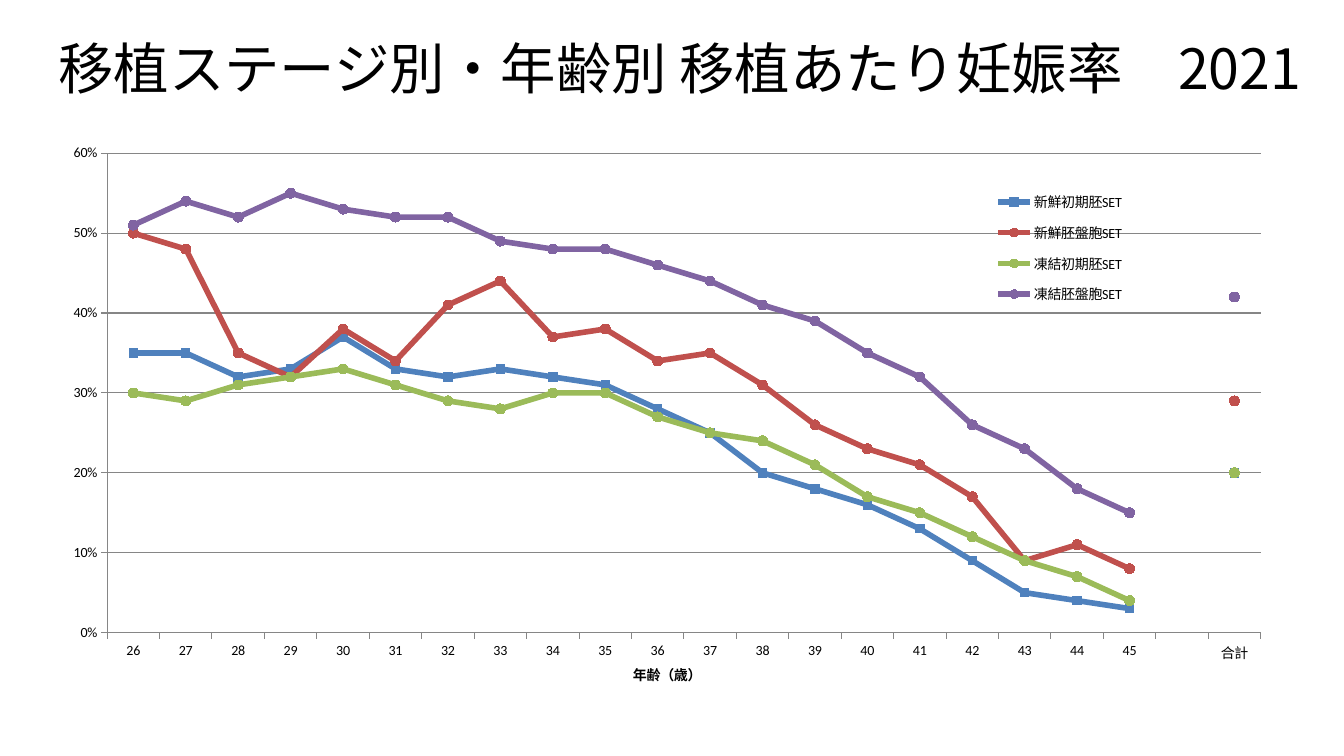
import pptx
import pptx.chart.data
import pptx.dml.color
import pptx.enum.chart
import pptx.enum.text
import pptx.oxml
import pptx.oxml.ns
import pptx.util
from pptx.util import Cm

AGES = [str(age) for age in range(26, 46)] + ["", "合計"]
RATES = [
    ("新鮮初期胚SET", "4F81BD", "SQUARE",
     [0.35, 0.35, 0.32, 0.33, 0.37, 0.33, 0.32, 0.33, 0.32, 0.31, 0.28,
      0.25, 0.2, 0.18, 0.16, 0.13, 0.09, 0.05, 0.04, 0.03, None, 0.2]),
    ("新鮮胚盤胞SET", "C0504D", "CIRCLE",
     [0.5, 0.48, 0.35, 0.32, 0.38, 0.34, 0.41, 0.44, 0.37, 0.38, 0.34,
      0.35, 0.31, 0.26, 0.23, 0.21, 0.17, 0.09, 0.11, 0.08, None, 0.29]),
    ("凍結初期胚SET", "9BBB59", "CIRCLE",
     [0.3, 0.29, 0.31, 0.32, 0.33, 0.31, 0.29, 0.28, 0.3, 0.3, 0.27,
      0.25, 0.24, 0.21, 0.17, 0.15, 0.12, 0.09, 0.07, 0.04, None, 0.2]),
    ("凍結胚盤胞SET", "8064A2", "CIRCLE",
     [0.51, 0.54, 0.52, 0.55, 0.53, 0.52, 0.52, 0.49, 0.48, 0.48, 0.46,
      0.44, 0.41, 0.39, 0.35, 0.32, 0.26, 0.23, 0.18, 0.15, None, 0.42]),
]
MARKER_SIZES = {"SQUARE": 6, "CIRCLE": 7}


def rgb(value):
    return pptx.dml.color.RGBColor.from_string(value)


def place(parent, index, box, inner=False):
    """Give a chart part a fixed place, in fractions of the chart."""
    ns = pptx.oxml.ns
    for old in parent.findall(ns.qn("c:layout")):
        parent.remove(old)
    target = '<c:layoutTarget val="inner"/>' if inner else ""
    modes = '<c:xMode val="edge"/><c:yMode val="edge"/>'
    sizes = "".join(f'<c:{k} val="{v}"/>' for k, v in zip("xywh", box))
    parent.insert(index, pptx.oxml.parse_xml(
        f'<c:layout {ns.nsdecls("c")}><c:manualLayout>{target}{modes}{sizes}'
        "</c:manualLayout></c:layout>"))


class RateSlide:
    title_font = "Noto Sans CJK JP"
    chart_font = "Calibri"
    ink = "000000"
    grid = "868686"

    def __init__(self, prs):
        self.s = prs.slides.add_slide(prs.slide_layouts[5])

    def style(self, font, name, size, bold=False):
        font.name, font.size, font.bold = name, pptx.util.Pt(size), bold
        font.color.rgb = rgb(self.ink)

    def title(self, text, left, top, width, height):
        sp = self.s.shapes.title
        sp.left, sp.top, sp.width, sp.height = left, top, width, height
        tf = sp.text_frame
        tf.word_wrap = True
        tf.auto_size = pptx.enum.text.MSO_AUTO_SIZE.NONE
        tf.vertical_anchor = pptx.enum.text.MSO_ANCHOR.MIDDLE
        p = tf.paragraphs[0]
        p.alignment = pptx.enum.text.PP_ALIGN.CENTER
        r = p.add_run()
        r.text = text
        self.style(r.font, self.title_font, 39.6)
        latin = sp.element.find(".//" + pptx.oxml.ns.qn("a:latin"))
        latin.addnext(pptx.oxml.parse_xml(
            f'<a:ea {pptx.oxml.ns.nsdecls("a")} typeface="{self.title_font}"/>'))

    def line_chart(self, left, top, width, height):
        enum = pptx.enum.chart
        data = pptx.chart.data.CategoryChartData(number_format="0%")
        data.categories = AGES
        for name, _, _, values in RATES:
            data.add_series(name, values)
        chart = self.s.shapes.add_chart(
            enum.XL_CHART_TYPE.LINE_MARKERS, left, top, width, height, data).chart
        chart.has_title = False
        self.style(chart.font, self.chart_font, 10)
        for series, (_, color, marker, _) in zip(chart.plots[0].series, RATES):
            self.series(series, color, marker)
        self.axes(chart)
        chart.has_legend = True
        chart.legend.position = enum.XL_LEGEND_POSITION.RIGHT
        chart.legend.include_in_layout = False
        place(chart.legend.element if hasattr(chart.legend, "element")
              else chart.element.find(".//" + pptx.oxml.ns.qn("c:legend")),
              1, (0.75, 0.09, 0.12, 0.24))
        place(chart.element.find(".//" + pptx.oxml.ns.qn("c:plotArea")),
              0, (0.05, 0.04, 0.92, 0.86), inner=True)

    def series(self, series, color, marker):
        series.smooth = False
        series.format.line.width = pptx.util.Pt(4)
        series.format.line.color.rgb = rgb(color)
        series.marker.style = pptx.enum.chart.XL_MARKER_STYLE[marker]
        series.marker.size = MARKER_SIZES[marker]
        series.marker.format.fill.solid()
        series.marker.format.fill.fore_color.rgb = rgb(color)
        series.marker.format.line.color.rgb = rgb(color)

    def axes(self, chart):
        ages, rates = chart.category_axis, chart.value_axis
        rates.minimum_scale, rates.maximum_scale, rates.major_unit = 0, 0.6, 0.1
        rates.tick_labels.number_format = "0%"
        rates.tick_labels.number_format_is_linked = False
        rates.has_major_gridlines = True
        for line in (ages.format.line, rates.format.line,
                     rates.major_gridlines.format.line):
            line.color.rgb = rgb(self.grid)
            line.width = pptx.util.Pt(0.75)
        for axis in (ages, rates):
            axis.major_tick_mark = pptx.enum.chart.XL_TICK_MARK.OUTSIDE
        r = ages.axis_title.text_frame.paragraphs[0].add_run()
        r.text = "年齢（歳）"
        self.style(r.font, self.chart_font, 10, bold=True)


def main():
    prs = pptx.Presentation()
    prs.slide_width, prs.slide_height = Cm(33.87), Cm(19.05)
    slide = RateSlide(prs)
    slide.title("移植ステージ別・年齢別 移植あたり妊娠率　2021",
                Cm(0.91), Cm(0.53), Cm(32.44), Cm(2.31))
    slide.line_chart(Cm(1.12), Cm(3.3), Cm(31.6), Cm(14.05))
    prs.save("out.pptx")


if __name__ == "__main__":
    main()
